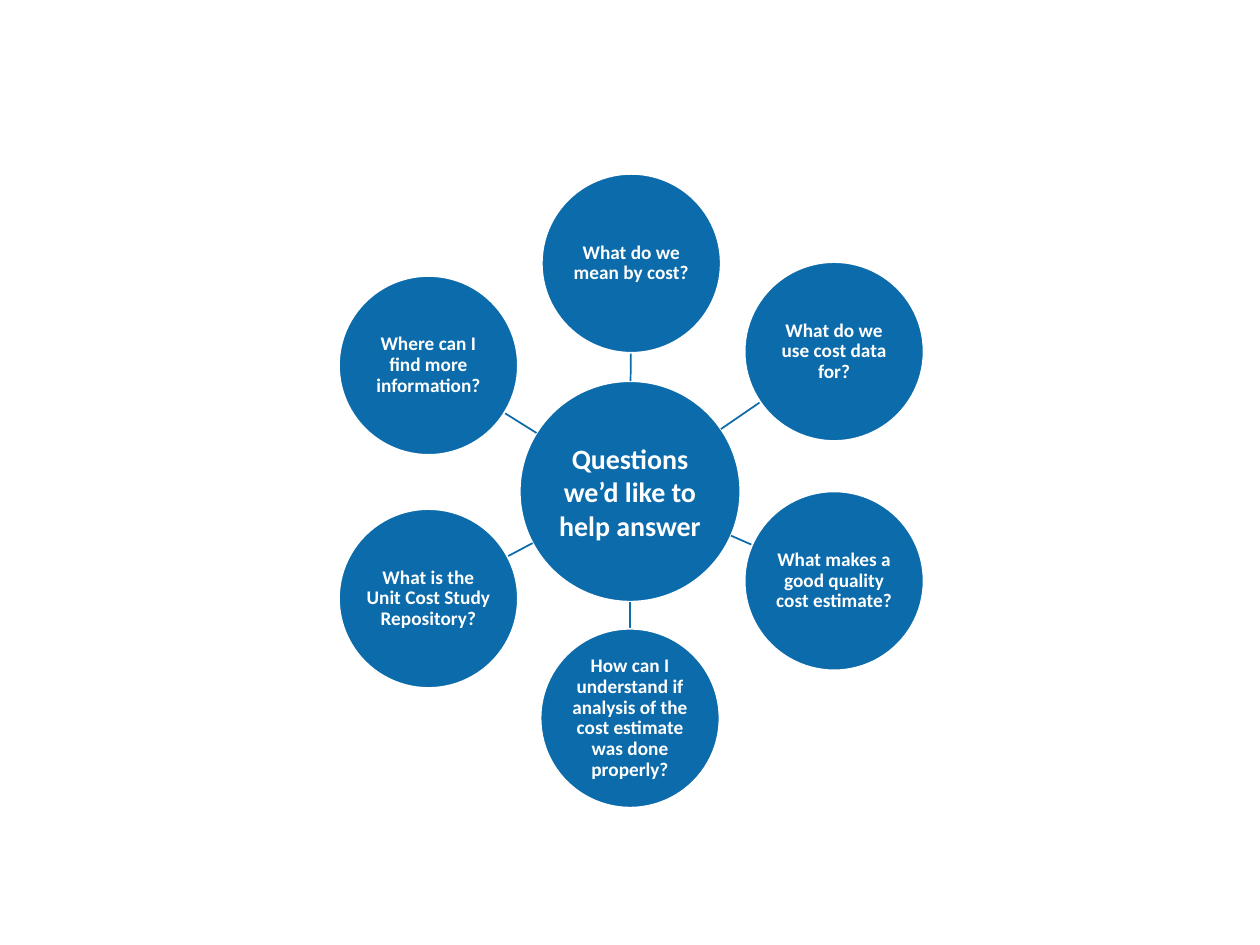
from math import hypot

from lxml.etree import SubElement
from pptx import Presentation
from pptx.dml.color import RGBColor
from pptx.enum.shapes import MSO_CONNECTOR, MSO_SHAPE
from pptx.enum.text import MSO_ANCHOR, PP_ALIGN
from pptx.oxml.ns import qn
from pptx.util import Inches, Pt

BLUE, WHITE = "0C6BAB", "FFFFFF"
HUB = ("Questions we’d like to help answer", 5, 3.9)
QUESTIONS = [
    ("What do we use cost data for?", 6.62, 2.79),
    ("What makes a good quality cost estimate?", 6.62, 4.61),
    ("What do we mean by cost?", 5.01, 2.09),
    ("How can I understand if analysis of the cost estimate was done properly?", 5, 5.7),
    ("What is the Unit Cost Study Repository?", 3.4, 4.75),
    ("Where can I find more information?", 3.4, 2.9),
]
HUB_DIAMETER, QUESTION_DIAMETER = 1.75, 1.42


def colour(value):
    """Return the colour for a hex string."""
    return RGBColor.from_string(value)


def add_circle(slide, text, x, y, diameter, size, spacing):
    """Add a labelled circle centred on a point."""
    corner = Inches(x - diameter / 2), Inches(y - diameter / 2)
    circle = slide.shapes.add_shape(
        MSO_SHAPE.OVAL, *corner, Inches(diameter), Inches(diameter))
    circle.shadow.inherit = False
    circle.fill.solid()
    circle.fill.fore_color.rgb = colour(BLUE)
    circle.line.color.rgb = colour(WHITE)
    circle.line.width = Pt(1)
    frame = circle.text_frame
    frame.text = text
    frame.word_wrap = True
    frame.vertical_anchor = MSO_ANCHOR.MIDDLE
    frame.margin_left = frame.margin_right = Inches(0.01)
    frame.margin_top = frame.margin_bottom = Inches(0.01)
    paragraph = frame.paragraphs[0]
    paragraph.alignment = PP_ALIGN.CENTER
    paragraph.line_spacing = spacing
    font = paragraph.runs[0].font
    font.name, font.size, font.bold = "Calibri", Pt(size), True
    font.color.rgb = colour(WHITE)


def add_spoke(slide, x, y):
    """Draw the line between the hub's edge and a question's edge."""
    hub_x, hub_y = HUB[1:]
    distance = hypot(x - hub_x, y - hub_y)
    ends = []
    for reach in (HUB_DIAMETER / 2, distance - QUESTION_DIAMETER / 2):
        share = reach / distance
        ends += [Inches(hub_x + (x - hub_x) * share),
                 Inches(hub_y + (y - hub_y) * share)]
    spoke = slide.shapes.add_connector(MSO_CONNECTOR.STRAIGHT, *ends)
    spoke.line.color.rgb = colour(BLUE)
    spoke.line.width = Pt(1)
    SubElement(spoke._element.spPr, qn("a:effectLst"))


def main():
    """Build the hub of questions and save it."""
    presentation = Presentation()
    presentation.slide_width, presentation.slide_height = Inches(10), Inches(7.5)
    slide = presentation.slides.add_slide(presentation.slide_layouts[6])
    add_circle(slide, *HUB, HUB_DIAMETER, 16, 1.0)
    for text, x, y in QUESTIONS:
        add_spoke(slide, x, y)
        add_circle(slide, text, x, y, QUESTION_DIAMETER, 11, 0.9)
    presentation.save("out.pptx")


if __name__ == "__main__":
    main()
